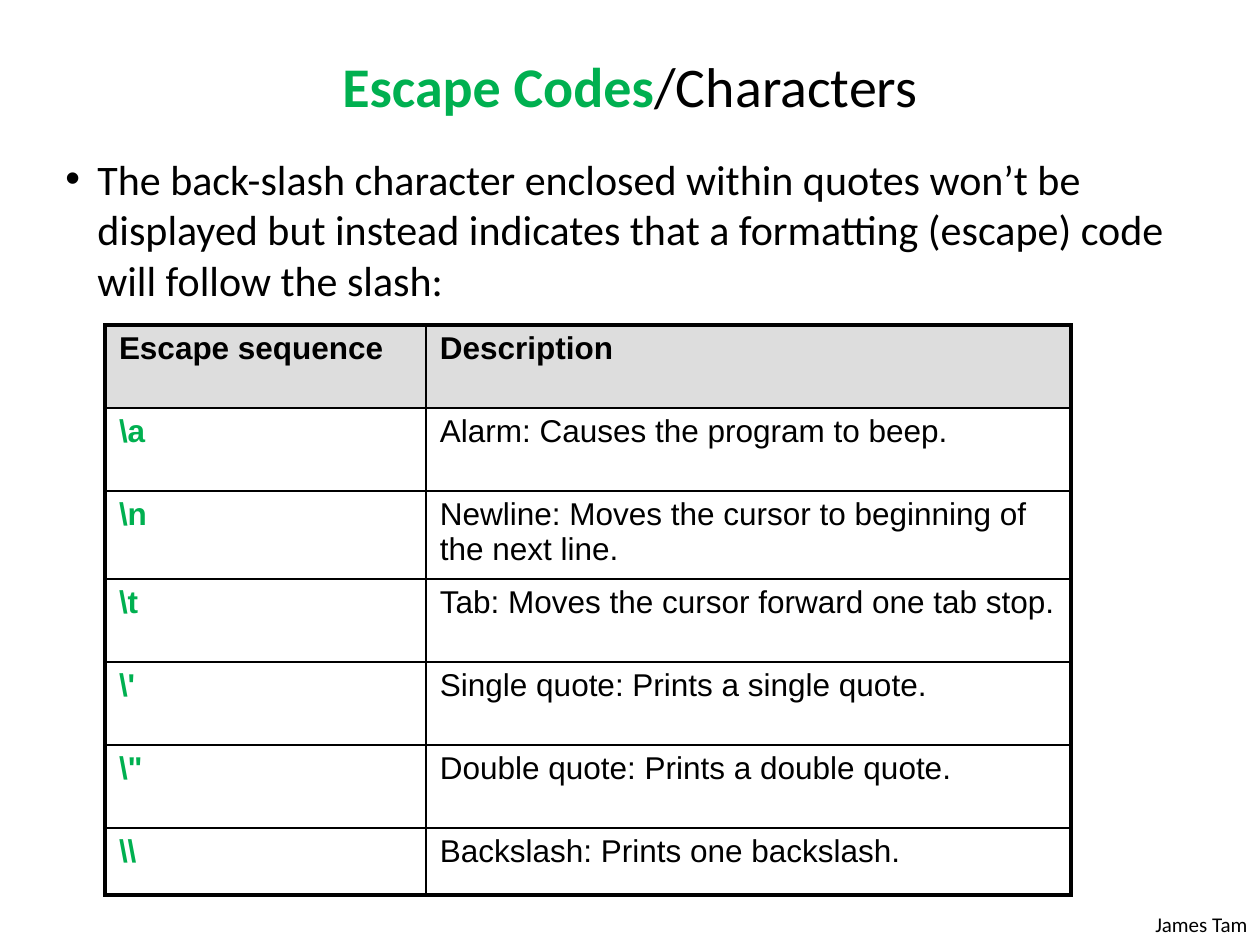
from lxml.etree import SubElement
from pptx import Presentation
from pptx.dml.color import RGBColor
from pptx.enum.text import MSO_ANCHOR, PP_ALIGN
from pptx.oxml.ns import qn
from pptx.util import Emu, Pt

PX_PER_INCH = 126
BLACK, GREEN, GRAY = "000000", "00B050", "DDDDDD"
THIN, THICK = 1, 2.25

ESCAPE_CODES = [
    ("Escape sequence", "Description"),
    (r"\a", "Alarm: Causes the program to beep."),
    (r"\n", "Newline: Moves the cursor to beginning of the next line."),
    (r"\t", "Tab: Moves the cursor forward one tab stop."),
    (r"\'", "Single quote: Prints a single quote."),
    (r'\"', "Double quote: Prints a double quote."),
    (r"\\", "Backslash: Prints one backslash."),
]
COLUMN_WIDTHS = (321, 645)
ROW_HEIGHTS = (83, 83, 88, 83, 83, 83, 67)


def px(length):
    return Emu(round(length * 914400 / PX_PER_INCH))


def rgb(color):
    return RGBColor.from_string(color)


def add_text(paragraph, text, size=18, color=BLACK, bold=False, font="Calibri"):
    run = paragraph.add_run()
    run.text = text
    run.font.size = Pt(size)
    run.font.bold = bold
    run.font.name = font
    run.font.color.rgb = rgb(color)


def add_textbox(slide, box):
    frame = slide.shapes.add_textbox(*map(px, box)).text_frame
    frame.word_wrap = True
    return frame.paragraphs[0]


def add_title(slide, box):
    title = slide.shapes.title
    title.left, title.top, title.width, title.height = map(px, box)
    title.text_frame.vertical_anchor = MSO_ANCHOR.MIDDLE
    heading = title.text_frame.paragraphs[0]
    heading.alignment = PP_ALIGN.CENTER
    add_text(heading, "Escape Codes", size=32, color=GREEN, bold=True)
    add_text(heading, "/Characters", size=32)


def add_explanation(slide, box):
    explanation = add_textbox(slide, box)
    # Bullet with a hanging indent
    properties = explanation._p.get_or_add_pPr()
    indent = px(32)
    properties.set("marL", str(indent))
    properties.set("indent", str(-indent))
    SubElement(properties, qn("a:buFont"), typeface="Arial")
    SubElement(properties, qn("a:buChar"), char="•")
    add_text(
        explanation,
        "The back-slash character enclosed within quotes won’t be displayed "
        "but instead indicates that a formatting (escape) code will follow the slash:",
        size=24,
    )


def add_author(slide, box):
    author = add_textbox(slide, box)
    author.alignment = PP_ALIGN.RIGHT
    add_text(author, "James Tam", size=12)


def set_borders(cell, **widths):
    properties = cell._tc.get_or_add_tcPr()
    # Border lines come before the fill
    for position, (side, width) in enumerate(widths.items()):
        line = SubElement(properties, qn(f"a:ln{side}"), w=str(Pt(width)))
        fill = SubElement(line, qn("a:solidFill"))
        SubElement(fill, qn("a:srgbClr"), val=BLACK)
        properties.insert(position, line)


def add_code_table(slide, left, top):
    last_row, last_column = len(ROW_HEIGHTS) - 1, len(COLUMN_WIDTHS) - 1
    table = slide.shapes.add_table(
        len(ROW_HEIGHTS), len(COLUMN_WIDTHS),
        px(left), px(top), px(sum(COLUMN_WIDTHS)), px(sum(ROW_HEIGHTS)),
    ).table
    table.horz_banding = False
    for column, width in zip(table.columns, COLUMN_WIDTHS):
        column.width = px(width)

    for r, (height, entries) in enumerate(zip(ROW_HEIGHTS, ESCAPE_CODES)):
        table.rows[r].height = px(height)
        for c, entry in enumerate(entries):
            cell = table.cell(r, c)
            cell.margin_left = cell.margin_right = px(14)
            cell.margin_top = cell.margin_bottom = px(6)
            is_header, is_code = r == 0, r > 0 and c == 0
            if is_header:
                cell.fill.solid()
                cell.fill.fore_color.rgb = rgb(GRAY)
            else:
                cell.fill.background()
            # Thick frame outside, thin grid inside
            set_borders(
                cell,
                L=THICK if c == 0 else THIN,
                R=THICK if c == last_column else THIN,
                T=THICK if r == 0 else THIN,
                B=THICK if r == last_row else THIN,
            )
            entry_line = cell.text_frame.paragraphs[0]
            entry_line.space_before = Pt(5.4)
            add_text(entry_line, entry, font="Arial",
                     color=GREEN if is_code else BLACK, bold=is_header or is_code)


def main():
    deck = Presentation()
    deck.slide_width, deck.slide_height = px(1260), px(945)
    slide = deck.slides.add_slide(deck.slide_layouts[5])
    add_author(slide, (1092, 905, 168, 38))
    add_explanation(slide, (53, 147, 1130, 726))
    add_title(slide, (63, 35, 1134, 101))
    add_code_table(slide, 105, 325)
    deck.save("out.pptx")


if __name__ == "__main__":
    main()
